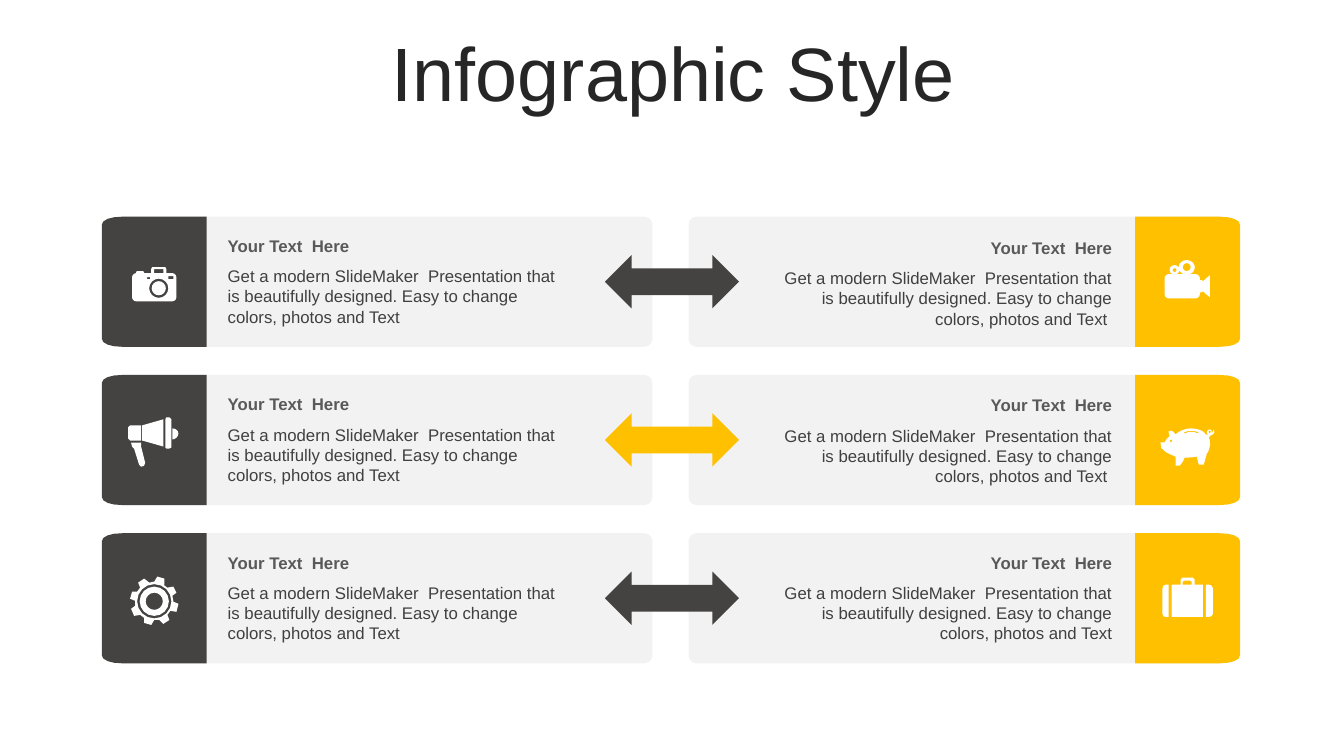
import dataclasses
import math

import pptx
import pptx.dml.color
import pptx.enum.shapes
import pptx.enum.text
import pptx.shapes.autoshape
import pptx.slide
import pptx.util

COLUMNS, ROWS = 1333, 750
CELL = pptx.util.Inches(0.01)
FONT = "Arial"
MAX_CURVE_STEPS = 4
COLORS = {
    "panel": "F2F2F2",
    "dark": "444342",
    "accent": "FFC000",
    "icon": "FFFFFF",
    "title": "262626",
    "heading": "595959",
    "body": "404040",
}

CARD_TOP, CARD_PITCH, CARD_HEIGHT = 215, 157, 129
PANEL_WIDTH, TAB_WIDTH = 535, 104
ARROW_LEFT, ARROW_WIDTH, ARROW_HEIGHT = 600, 133, 53
ARROW_COLORS = ("dark", "accent", "dark")
CIRCLE_HANDLE = 0.55

HEADING = "Your Text  Here"
BODY = (
    "Get a modern SlideMaker  Presentation that is beautifully designed. "
    "Easy to change colors, photos and Text"
)

TAB = "0,121 0,8 C 0,3 9,0 20,0 104,0 104,129 20,129 C 9,129 0,126 0,121"
CAMERA = (
    "20,0 33,0 34,2 34,6 40,6 C 42,6 44,8 44,10 44,30 C 44,32 42,34 40,34 "
    "4,34 C 2,34 0,32 0,30 0,10 C 0,8 2,6 4,6 4,5 5,4 11,4 12,5 12,6 19,6 19,2 / "
    "O 26.5,21 9.5 / O 26.5,21 7 / 15,10 15,12 18,12 18,10 / "
    "36,9 36,12 41,12 41,9 / 22,2 22,6 31,6 31,2"
)
MEGAPHONE = (
    "13,25 13,29 17,45 16,48 13,49 11,47 6,31 4,29 3,25 / "
    "44,11 C 47,11 50,13 50,16 C 50,19 47,22 44,22 / "
    "2,8 13,8 13,23 2,23 0,21 0,10 / "
    "35,2 35,29 14,23 14,8 / "
    "38,0 41,0 43,2 43,30 41,31 38,31 37,30 37,2"
)
GEAR = (
    "34,2 34,8 33,8 37,11 43,10 46,16 42,19 43,25 "
    "48,27 46,35 40,34 37,38 39,43 33,47 29,43 24,43 "
    "21,48 14,46 14,41 10,38 4,39 1,32 5,29 5,24 "
    "0,22 2,15 7,15 10,11 8,6 14,2 19,6 24,5 27,0 / "
    "O 24,24.5 17 / O 24,24.5 14.5 / O 24,24.5 8.5"
)
FILM_CAMERA = (
    "22,0 C 26,0 30,3 30,7 C 30,10 28,13 25,14 31,14 C 33,14 35,16 35,18 35,20 "
    "37,20 38,21 45,15 45,37 38,31 37,32 35,32 35,34 C 35,36 33,38 31,38 4,38 "
    "C 2,38 0,36 0,34 0,18 C 0,16 2,14 4,14 8,14 C 6,13 5,12 5,10 "
    "C 5,7 7,5 10,5 C 12,5 15,7 15,10 C 15,12 13,13 12,14 19,14 "
    "C 16,13 14,10 14,7 C 14,3 18,0 22,0 / O 10,10 2 / O 22,7 4"
)
PIGGY_BANK = (
    "31,0 C 37,0 44,2 46,6 48,7 47,4 C 47,2 48,1 50,1 "
    "C 51,1 52,2 52,4 52,5 54,1 C 56,5 53,6 51,7 49,9 50,12 "
    "C 51,17 49,23 47,25 44,36 39,36 37,28 C 33,29 28,29 25,29 "
    "C 24,32 22,35 20,37 16,37 16,28 C 11,26 -1,22 1,14 "
    "5,14 C 7,11 7,10 10,8 9,3 C 13,1 14,4 16,6 "
    "C 20,2 27,0 31,0 / O 11.5,12.5 1.5 / O 50,3.5 1.5 / "
    "24,4 25,5 C 29,3 34,3 38,5 39,4 C 35,2 28,2 24,4"
)
SUITCASE = (
    "43,7 46,7 C 48,7 50,9 50,11 50,36 C 50,38 48,39 46,39 43,39 / "
    "3,7 6,7 6,39 3,39 C 1,39 0,38 0,36 0,11 C 0,9 1,7 3,7 / "
    "22,3 20,4 20,7 29,7 29,4 27,3 / "
    "20,0 30,0 32,2 32,7 40,7 40,39 9,39 9,7 18,7 18,2"
)

Point = tuple[float, float]


@dataclasses.dataclass(frozen=True)
class Icon:
    outline: str
    left: int
    top: int


@dataclasses.dataclass(frozen=True)
class Side:
    panel_left: int
    tab_left: int
    tab_color: str
    mirrored: bool
    text_left: int
    text_top: int
    text_pitch: int
    text_width: int
    alignment: pptx.enum.text.PP_ALIGN
    bodies: tuple[str, ...]
    icons: tuple[Icon, ...]


SIDES = (
    Side(112, 101, "dark", False, 216, 229, 157, 355, pptx.enum.text.PP_ALIGN.LEFT,
         (BODY, BODY, BODY),
         (Icon(CAMERA, 131, 265), Icon(MEGAPHONE, 127, 414), Icon(GEAR, 129, 572))),
    Side(683, 1126, "accent", True, 762, 231, 156, 351, pptx.enum.text.PP_ALIGN.RIGHT,
         (BODY + " ", BODY + " ", BODY),
         (Icon(FILM_CAMERA, 1155, 258), Icon(PIGGY_BANK, 1150, 425), Icon(SUITCASE, 1153, 573))),
)


def cells(count: float) -> pptx.util.Emu:
    return pptx.util.Emu(round(count * CELL))


def rgb(name: str) -> pptx.dml.color.RGBColor:
    return pptx.dml.color.RGBColor.from_string(COLORS[name])


def paint(shape: pptx.shapes.autoshape.Shape, color: str) -> None:
    shape.shadow.inherit = False
    shape.fill.solid()
    shape.fill.fore_color.rgb = rgb(color)
    shape.line.fill.background()


def read_point(token: str) -> Point:
    x, y = token.split(",")
    return float(x), float(y)


def bend(controls: list[Point]) -> list[Point]:
    steps = min(MAX_CURVE_STEPS, math.ceil(math.dist(controls[0], controls[-1]) / 2.5))
    points = []
    for step in range(1, steps + 1):
        t = step / steps
        weights = ((1 - t) ** 3, 3 * t * (1 - t) ** 2, 3 * t * t * (1 - t), t ** 3)
        points.append(tuple(sum(w * p[axis] for w, p in zip(weights, controls)) for axis in (0, 1)))
    return points


def circle(center: Point, radius: float) -> list[Point]:
    handle = radius * CIRCLE_HANDLE
    quarter = bend([(radius, 0), (radius, handle), (handle, radius), (0, radius)])
    offsets = []
    for _ in range(4):
        offsets += quarter
        quarter = [(-y, x) for x, y in quarter]
    return [(center[0] + x, center[1] + y) for x, y in offsets]


def trace(contour: str) -> list[Point]:
    tokens = contour.split()
    if tokens[0] == "O":
        return circle(read_point(tokens[1]), float(tokens[2]))
    points: list[Point] = []
    remaining = iter(tokens)
    for token in remaining:
        if token == "C":
            points += bend([points[-1]] + [read_point(next(remaining)) for _ in range(3)])
        else:
            points.append(read_point(token))
    return points


def add_outline(slide: pptx.slide.Slide, outline: str, left: int, top: int, color: str,
                mirror_width: int = 0) -> None:
    builder = None
    for contour in outline.split("/"):
        points = [(cells(mirror_width - x if mirror_width else x), cells(y)) for x, y in trace(contour)]
        if builder is None:
            builder = slide.shapes.build_freeform(*points[0])
        else:
            builder.move_to(*points[0])
        builder.add_line_segments(points[1:], close=True)
    paint(builder.convert_to_shape(cells(left), cells(top)), color)


def add_preset(slide: pptx.slide.Slide, kind: pptx.enum.shapes.MSO_SHAPE, left: int, top: int,
               width: int, height: int, color: str) -> pptx.shapes.autoshape.Shape:
    shape = slide.shapes.add_shape(kind, cells(left), cells(top), cells(width), cells(height))
    paint(shape, color)
    return shape


def write(shape: pptx.shapes.autoshape.Shape, text: str, size: int, color: str,
          alignment: pptx.enum.text.PP_ALIGN, bold: bool = False) -> None:
    shape.text_frame.word_wrap = True
    shape.text_frame.text = text
    paragraph = shape.text_frame.paragraphs[0]
    paragraph.alignment = alignment
    font = paragraph.runs[0].font
    font.name, font.size, font.bold = FONT, pptx.util.Pt(size), bold
    font.color.rgb = rgb(color)


def add_title(slide: pptx.slide.Slide) -> None:
    title = slide.shapes.title
    title.left, title.top, title.width, title.height = map(cells, (35, 37, 1266, 79))
    write(title, "Infographic Style", 54, "title", pptx.enum.text.PP_ALIGN.CENTER)
    title.text_frame.auto_size = pptx.enum.text.MSO_AUTO_SIZE.NONE
    title.text_frame.vertical_anchor = pptx.enum.text.MSO_ANCHOR.MIDDLE
    paragraph = title.text_frame.paragraphs[0]
    paragraph.line_spacing, paragraph.space_before = 0.9, pptx.util.Pt(10)


def add_card(slide: pptx.slide.Slide, side: Side, row: int) -> None:
    top = CARD_TOP + row * CARD_PITCH
    panel = add_preset(slide, pptx.enum.shapes.MSO_SHAPE.ROUNDED_RECTANGLE,
                       side.panel_left, top, PANEL_WIDTH, CARD_HEIGHT, "panel")
    panel.adjustments[0] = 0.06
    add_outline(slide, TAB, side.tab_left, top, side.tab_color, TAB_WIDTH if side.mirrored else 0)
    icon = side.icons[row]
    add_outline(slide, icon.outline, icon.left, icon.top, "icon")
    text_top = side.text_top + row * side.text_pitch
    for text, offset, height, color in ((HEADING, 0, 30, "heading"), (side.bodies[row], 30, 71, "body")):
        box = slide.shapes.add_textbox(cells(side.text_left), cells(text_top + offset),
                                       cells(side.text_width), cells(height))
        write(box, text, 12, color, side.alignment, bold=color == "heading")


def main() -> None:
    presentation = pptx.Presentation()
    presentation.slide_width, presentation.slide_height = cells(COLUMNS), cells(ROWS)
    slide = presentation.slides.add_slide(presentation.slide_layouts.get_by_name("Title Only"))
    add_title(slide)
    for row, color in enumerate(ARROW_COLORS):
        for side in SIDES:
            add_card(slide, side, row)
        arrow_top = CARD_TOP + row * CARD_PITCH + (CARD_HEIGHT - ARROW_HEIGHT) // 2
        add_preset(slide, pptx.enum.shapes.MSO_SHAPE.LEFT_RIGHT_ARROW,
                   ARROW_LEFT, arrow_top, ARROW_WIDTH, ARROW_HEIGHT, color)
    presentation.save("out.pptx")


if __name__ == "__main__":
    main()
